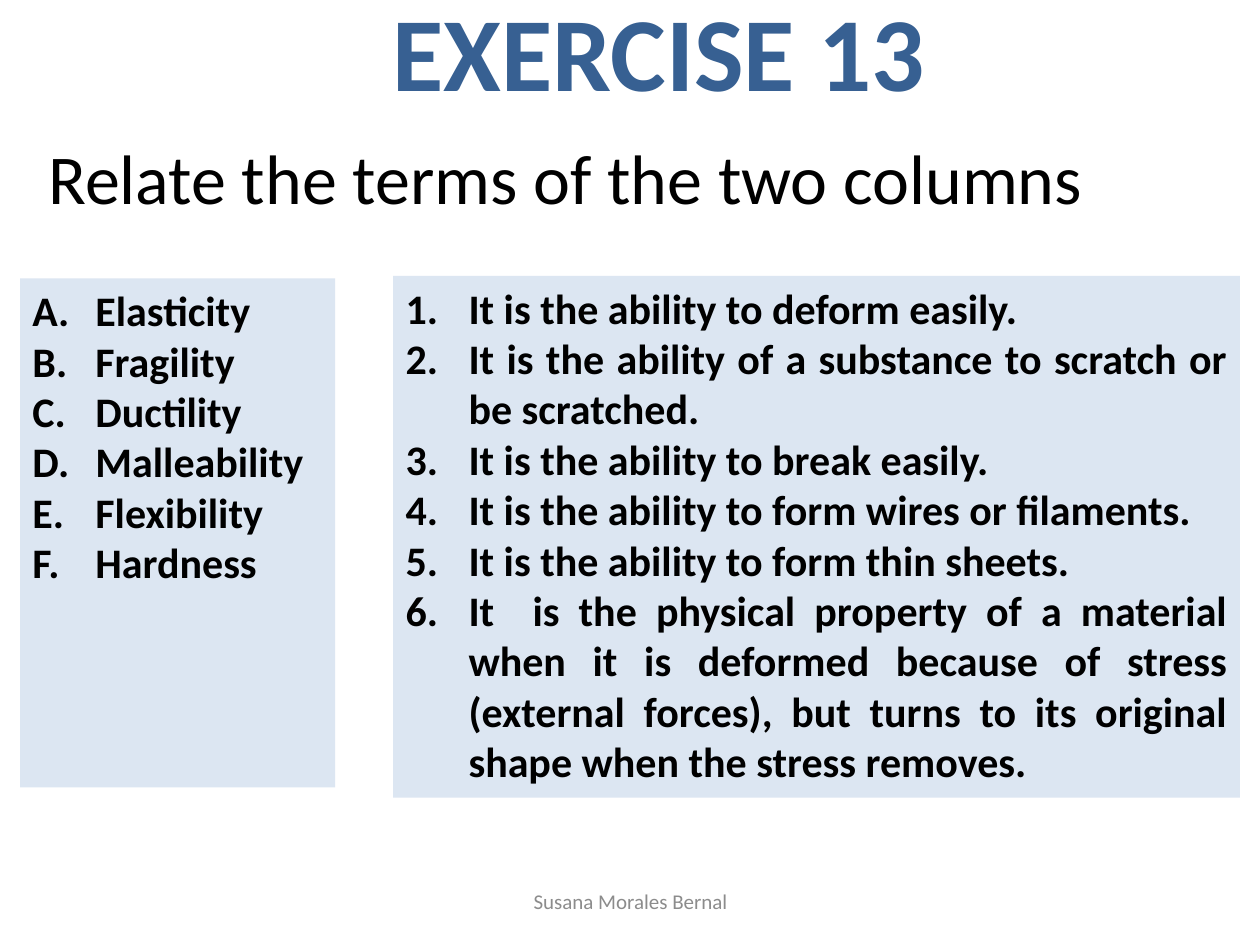
import pptx
import pptx.util
import pptx.dml.color
import pptx.enum.text
import pptx.oxml.ns
import lxml.etree

Inches = pptx.util.Inches
Align = pptx.enum.text.PP_ALIGN
Anchor = pptx.enum.text.MSO_ANCHOR
Fit = pptx.enum.text.MSO_AUTO_SIZE

TERMS = ["Elasticity", "Fragility", "Ductility", "Malleability", "Flexibility", "Hardness"]
CLUES = [
    "It is the ability to deform easily. ",
    "It is the ability of a substance to scratch or be scratched.",
    "It is the ability to break easily.",
    "It is the ability to form wires or filaments.",
    "It is the ability to form thin sheets.",
    "It  is the physical property of a material when it is deformed because of stress "
    "(external forces), but turns to its original shape when the stress removes. ",
]


def color(code):
    return pptx.dml.color.RGBColor.from_string(code)


def place(shape, left, top, width, height):
    shape.left, shape.top = Inches(left), Inches(top)
    shape.width, shape.height = Inches(width), Inches(height)


def write(para, text, size, tint="000000", bold=False, align=Align.LEFT):
    para.alignment = align
    run = para.add_run()
    run.text = text
    font = run.font
    font.name, font.size, font.bold = "Calibri", pptx.util.Pt(size), bold
    font.color.rgb = color(tint)


def setup(shape, anchor=Anchor.TOP):
    frame = shape.text_frame
    frame.word_wrap = True
    frame.auto_size = Fit.NONE
    frame.vertical_anchor = anchor
    return frame


def add_title(slide, text, box):
    title = slide.shapes.title
    place(title, *box)
    write(setup(title).paragraphs[0], text, 60, "376092", True, Align.CENTER)


def add_text(slide, box, text, size, anchor=Anchor.TOP, **style):
    shape = slide.shapes.add_textbox(*map(Inches, box))
    write(setup(shape, anchor).paragraphs[0], text, size, **style)


def number(para, scheme):
    props = para._p.get_or_add_pPr()
    props.set("marL", str(Inches(0.5)))
    props.set("indent", str(-Inches(0.5)))
    mark = lxml.etree.SubElement(props, pptx.oxml.ns.qn("a:buAutoNum"))
    mark.set("type", scheme)


def add_list(slide, box, items, scheme):
    panel = slide.shapes.add_textbox(*map(Inches, box))
    panel.fill.solid()
    panel.fill.fore_color.rgb = color("DCE6F2")
    frame = setup(panel)
    for i, item in enumerate(items):
        para = frame.add_paragraph() if i else frame.paragraphs[0]
        write(para, item, 24, bold=True, align=Align.JUSTIFY)
        number(para, scheme)


def main():
    deck = pptx.Presentation()
    deck.slide_width, deck.slide_height = Inches(10), Inches(7.5)
    slide = deck.slides.add_slide(deck.slide_layouts[5])
    add_title(slide, "EXERCISE 13", (0.23, -0.16, 10, 1.11))
    add_text(slide, (0.16, 1.02, 8.75, 0.77), " Relate the terms of the two columns", 40)
    add_list(slide, (3.12, 2.19, 6.72, 4.14), CLUES, "arabicPeriod")
    add_list(slide, (0.16, 2.21, 2.5, 4.04), TERMS, "alphaUcPeriod")
    add_text(slide, (3.42, 6.95, 3.17, 0.4), "Susana Morales Bernal", 12,
             Anchor.MIDDLE, tint="8C8C8C", align=Align.CENTER)
    deck.save("out.pptx")


if __name__ == "__main__":
    main()
